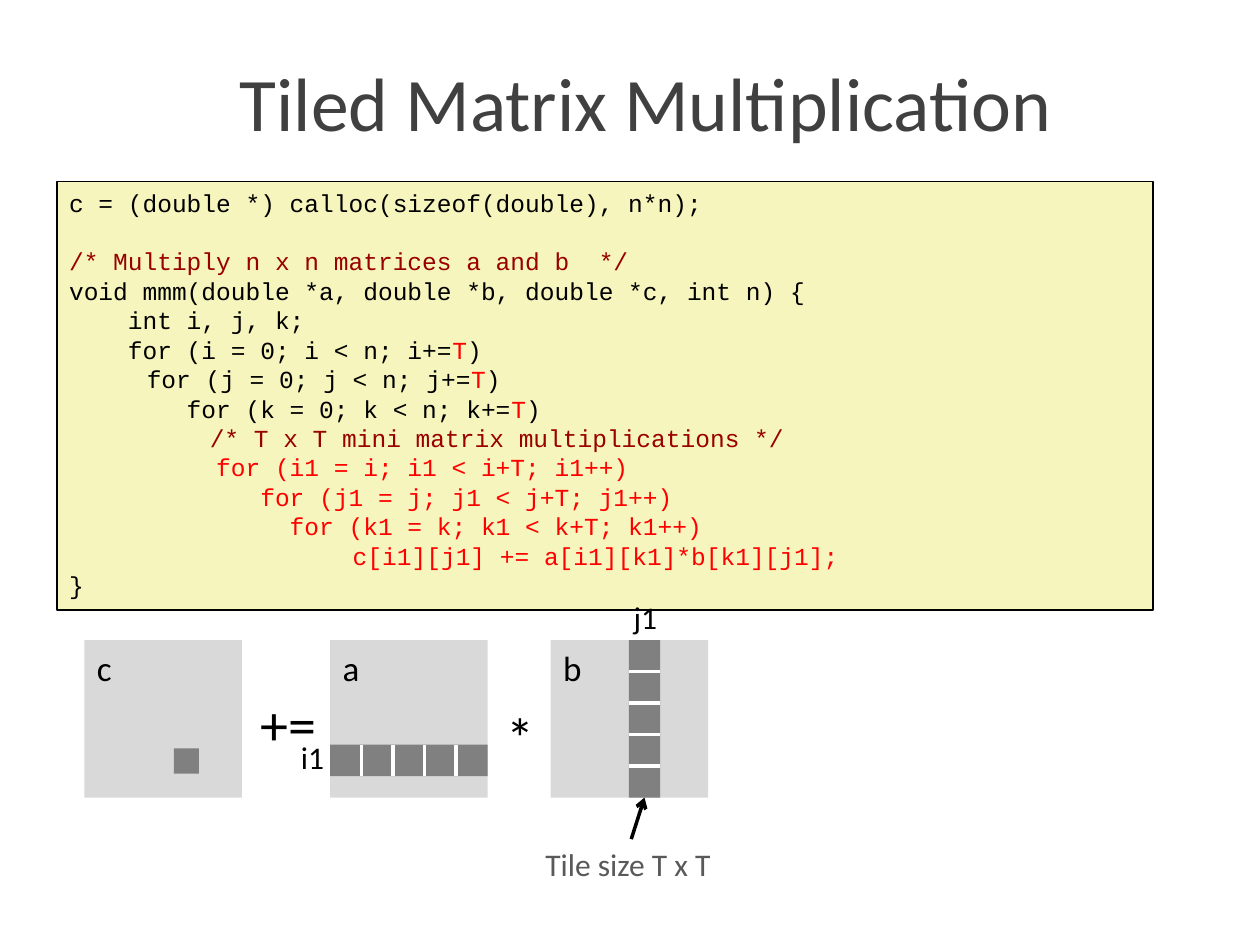
import pptx
import pptx.util
import pptx.dml.color
import pptx.enum.shapes
import pptx.enum.text
import pptx.oxml
import pptx.oxml.ns

Inches = pptx.util.Inches
Pt = pptx.util.Pt
RGBColor = pptx.dml.color.RGBColor
Align = pptx.enum.text.PP_ALIGN
Anchor = pptx.enum.text.MSO_ANCHOR
Fit = pptx.enum.text.MSO_AUTO_SIZE

BLACK = RGBColor(0x00, 0x00, 0x00)
WHITE = RGBColor(0xFF, 0xFF, 0xFF)
CREAM = RGBColor(0xF6, 0xF5, 0xBD)
LIGHT = RGBColor(0xD9, 0xD9, 0xD9)
GRAY = RGBColor(0x80, 0x80, 0x80)
DARK = RGBColor(0x40, 0x40, 0x40)
SLATE = RGBColor(0x59, 0x59, 0x59)
RED = RGBColor(0xFF, 0x00, 0x00)
MAROON = RGBColor(0x99, 0x00, 0x00)

SIDE = 1.25
TILE = SIDE / 5
TOP = 5.08
LEFT = {"c": 0.67, "a": 2.62, "b": 4.37}
ROW = 5.91
COL = 4.99

# Each line of code is a list of (text, colour) runs.
CODE = [
    [("c = (double *) calloc(sizeof(double), n*n);", BLACK)],
    [("/* Multiply n x n matrices a and b  */", MAROON)],
    [("void mmm(double *a, double *b, double *c, int n) {", BLACK)],
    [("    int i, j, k;", BLACK)],
    [("    for (i = 0; i < n; i+=", BLACK), ("T", RED), (")", BLACK)],
    [("\t for (j = 0; j < n; j+=", BLACK), ("T", RED), (")", BLACK)],
    [("        for (k = 0; k < n; k+=", BLACK), ("T", RED), (")", BLACK)],
    [("\t\t /* T x T mini matrix multiplications */", MAROON)],
    [("          for (i1 = i; i1 < i+T; i1++)", RED)],
    [("             for (j1 = j; j1 < j+T; j1++)", RED)],
    [("               for (k1 = k; k1 < k+T; k1++)", RED)],
    [("\t               c[i1][j1] += a[i1][k1]*b[k1][j1];", RED)],
    [("}", BLACK)],
]
PITCH = 16.8


def style(font, name, size, color):
    font.name = name
    font.size = Pt(size)
    font.color.rgb = color


def add_box(slide, x, y, w, h, fill):
    box = slide.shapes.add_shape(
        pptx.enum.shapes.MSO_SHAPE.RECTANGLE,
        Inches(x), Inches(y), Inches(w), Inches(h))
    box.shadow.inherit = False
    box.fill.solid()
    box.fill.fore_color.rgb = fill
    box.line.fill.background()
    return box


def add_text(slide, text, x, y, w, h, size, color=BLACK):
    box = slide.shapes.add_textbox(Inches(x), Inches(y), Inches(w), Inches(h))
    frame = box.text_frame
    frame.text = text
    frame.word_wrap = False
    frame.auto_size = Fit.SHAPE_TO_FIT_TEXT
    style(frame.paragraphs[0].runs[0].font, "Calibri", size, color)
    return box


def add_title(slide):
    frame = add_text(slide, "Tiled Matrix Multiplication",
                     0.36, 0.38, 9.53, 0.85, 43.2, DARK).text_frame
    frame.auto_size = Fit.NONE
    frame.word_wrap = True
    frame.vertical_anchor = Anchor.MIDDLE
    frame.paragraphs[0].alignment = Align.CENTER


def set_tabs(para):
    """Put tab stops at half an inch and one inch."""
    tabs = pptx.oxml.parse_xml(
        "<a:tabLst %s><a:tab pos='457200' algn='l'/>"
        "<a:tab pos='914400' algn='l'/></a:tabLst>"
        % pptx.oxml.ns.nsdecls("a"))
    para._p.get_or_add_pPr().append(tabs)


def add_code(slide):
    box = add_box(slide, 0.45, 1.44, 8.7, 3.4, CREAM)
    box.line.color.rgb = BLACK
    box.line.width = Pt(1)
    frame = box.text_frame
    frame.word_wrap = True
    frame.vertical_anchor = Anchor.TOP
    for num, parts in enumerate(CODE):
        para = frame.paragraphs[0] if num == 0 else frame.add_paragraph()
        para.alignment = Align.LEFT
        para.line_spacing = Pt(PITCH)
        if num == 1:
            para.space_before = Pt(PITCH)
        set_tabs(para)
        for text, color in parts:
            run = para.add_run()
            run.text = text
            style(run.font, "Courier New", 14, color)


def add_matrix(slide, name):
    box = add_box(slide, LEFT[name], TOP, SIDE, SIDE, LIGHT)
    frame = box.text_frame
    frame.text = name
    frame.vertical_anchor = Anchor.TOP
    para = frame.paragraphs[0]
    para.alignment = Align.LEFT
    style(para.runs[0].font, "Calibri", 20, BLACK)


def add_line(slide, x1, y1, x2, y2, color):
    line = slide.shapes.add_connector(
        pptx.enum.shapes.MSO_CONNECTOR.STRAIGHT,
        Inches(x1), Inches(y1), Inches(x2), Inches(y2))
    line.line.color.rgb = color
    line.line.width = Pt(2)
    line._element.spPr.append(pptx.oxml.parse_xml(
        "<a:effectLst %s/>" % pptx.oxml.ns.nsdecls("a")))
    return line


def add_arrow(slide, x, y, target):
    """Point from (x, y) to the bottom side of the target."""
    arrow = add_line(slide, x, y, x, y, BLACK)
    arrow.end_connect(target, 2)
    arrow.line._get_or_add_ln().append(pptx.oxml.parse_xml(
        "<a:tailEnd type='arrow' %s/>" % pptx.oxml.ns.nsdecls("a")))


def add_tiles(slide):
    """Draw the tile of c, the tile row of a and the tile column of b."""
    add_box(slide, 1.38, 5.94, 0.2, 0.2, GRAY)
    add_box(slide, LEFT["a"], ROW, SIDE, TILE, GRAY)
    strip = add_box(slide, COL, TOP, TILE, SIDE, GRAY)
    for num in range(1, 5):
        x = LEFT["a"] + num * TILE
        y = TOP + num * TILE
        add_line(slide, x, ROW, x, ROW + TILE, WHITE)
        add_line(slide, COL, y, COL + TILE, y, WHITE)
    return strip


def main():
    deck = pptx.Presentation()
    deck.slide_width = Inches(10)
    deck.slide_height = Inches(7.5)
    slide = deck.slides.add_slide(deck.slide_layouts[6])
    add_title(slide)
    add_code(slide)
    for name in LEFT:
        add_matrix(slide, name)
    add_text(slide, "+=", 1.97, 5.42, 0.65, 0.45, 32)
    add_text(slide, "*", 3.92, 5.53, 0.43, 0.45, 32)
    add_text(slide, "i1", 2.29, 5.81, 0.39, 0.3, 18)
    add_text(slide, "j1", 4.93, 4.7, 0.39, 0.3, 18)
    strip = add_tiles(slide)
    add_text(slide, "Tile size T x T", 4.23, 6.66, 1.55, 0.3, 18, SLATE)
    add_arrow(slide, 5.01, 6.66, strip)
    deck.save("out.pptx")


if __name__ == "__main__":
    main()
